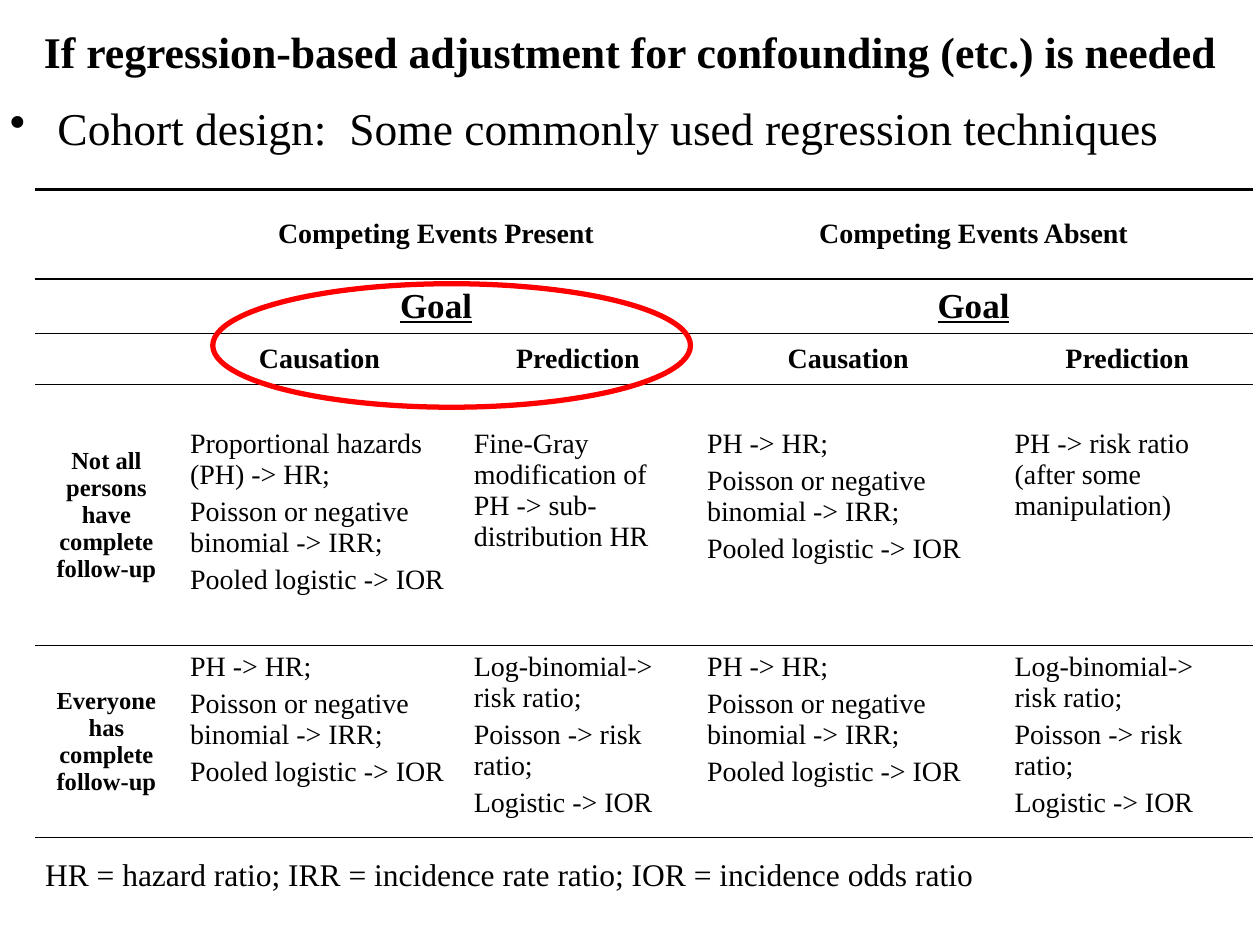
from lxml import etree
from pptx import Presentation
from pptx import util as u
from pptx.dml.color import RGBColor
from pptx.enum import shapes, text
from pptx.oxml import ns

FONT = "Times New Roman"
COLORS = {"ink": "000000", "highlight": "FF0000"}
PLAIN_TABLE_STYLE = "{2D5ABB26-0587-4C30-8999-92F81FD0307C}"
LEFT, CENTER = text.PP_ALIGN.LEFT, text.PP_ALIGN.CENTER

COLUMN_WIDTHS = [2.87, 5.72, 4.7, 6.2, 5.05]
ROW_HEIGHTS = [1.8, 0.97, 0.81, 5.26, 3.84]
TOP_MARGIN = 0.13
DEEP_MARGIN = 0.89
# Rules in points: (row, side) -> width
RULES = {(0, "T"): 2.25, (0, "B"): 1, (1, "T"): 1,
         (2, "B"): 1, (3, "T"): 1, (4, "B"): 1}

# Table wording
EVENTS = ["Competing Events Present", "Competing Events Absent"]
GOALS = ["Causation", "Prediction"]
RATE_MODELS = ["Poisson or negative binomial -> IRR;", "Pooled logistic -> IOR"]
HAZARD_MODELS = ["PH -> HR;"] + RATE_MODELS
RISK_MODELS = ["Log-binomial-> risk ratio;", "Poisson -> risk ratio;", "Logistic -> IOR"]
FOLLOW_UP = {
    "Not all persons have complete follow-up": [
        ["Proportional hazards (PH) -> HR;"] + RATE_MODELS,
        ["Fine-Gray modification of PH -> sub-distribution HR"],
        HAZARD_MODELS,
        ["PH -> risk ratio (after some manipulation)"],
    ],
    "Everyone has complete follow-up": [HAZARD_MODELS, RISK_MODELS] * 2,
}


def write(frame, lines, size, bold=False, underline=False, align=LEFT):
    """Fill a text frame with one paragraph per line."""
    frame.text = "\n".join(lines)
    for index, para in enumerate(frame.paragraphs):
        para.alignment = align
        para.space_before = u.Pt(size * 0.2 if index else 0)
        for span in para.runs:
            font = span.font
            font.name, font.size = FONT, u.Pt(size)
            font.bold, font.underline = bold, underline
            font.color.rgb = RGBColor.from_string(COLORS["ink"])


def add_text(page, place, line, size, **style):
    box = page.shapes.add_textbox(*map(u.Cm, place))
    box.text_frame.word_wrap = True
    write(box.text_frame, [line], size, **style)
    return box


def add_bullet(para, indent):
    props = para._p.get_or_add_pPr()
    props.set("marL", str(u.Cm(indent)))
    props.set("indent", str(-u.Cm(indent)))
    etree.SubElement(props, ns.qn("a:buChar"), char="•")


def add_rule(cell, side, width):
    props = cell._tc.get_or_add_tcPr()
    line = etree.SubElement(props, ns.qn("a:ln" + side), w=str(u.Pt(width)))
    fill = etree.SubElement(line, ns.qn("a:solidFill"))
    etree.SubElement(fill, ns.qn("a:srgbClr"), val=COLORS["ink"])


def write_heading(cell, line, size, underline=False):
    cell.vertical_anchor = text.MSO_ANCHOR.MIDDLE
    write(cell.text_frame, [line], size, bold=True, underline=underline, align=CENTER)


def add_table(page):
    frame = page.shapes.add_table(len(ROW_HEIGHTS), len(COLUMN_WIDTHS), u.Cm(0.71),
                                  u.Cm(3.82), u.Cm(sum(COLUMN_WIDTHS)),
                                  u.Cm(sum(ROW_HEIGHTS)))
    table = frame.table
    table.first_row = table.horz_banding = False
    table._tbl.tblPr.find(ns.qn("a:tableStyleId")).text = PLAIN_TABLE_STYLE
    for column, width in zip(table.columns, COLUMN_WIDTHS):
        column.width = u.Cm(width)
    for row, height in zip(table.rows, ROW_HEIGHTS):
        row.height = u.Cm(height)

    # Rules and clear fill
    for row_index, row in enumerate(table.rows):
        for cell in row.cells:
            for side in "TB":
                if (row_index, side) in RULES:
                    add_rule(cell, side, RULES[row_index, side])
            cell.fill.background()
            cell.margin_top = cell.margin_bottom = u.Cm(TOP_MARGIN)

    # Column headings, one pair of columns per kind of event
    for column, event in zip((1, 3), EVENTS):
        for row in (0, 1):
            table.cell(row, column).merge(table.cell(row, column + 1))
        write_heading(table.cell(0, column), event, 16)
        write_heading(table.cell(1, column), "Goal", 20, underline=True)
        for offset, goal in enumerate(GOALS):
            write_heading(table.cell(2, column + offset), goal, 16)

    # Techniques by follow-up
    for row, (heading, techniques) in enumerate(FOLLOW_UP.items(), start=3):
        write_heading(table.cell(row, 0), heading, 14)
        for column, lines in enumerate(techniques, start=1):
            cell = table.cell(row, column)
            cell.margin_top = u.Cm(DEEP_MARGIN if row == 3 else TOP_MARGIN)
            write(cell.text_frame, lines, 16)


def add_ring(page, place):
    ring = page.shapes.add_shape(shapes.MSO_SHAPE.OVAL, *map(u.Cm, place))
    ring.shadow.inherit = False
    ring.fill.background()
    ring.line.color.rgb = RGBColor.from_string(COLORS["highlight"])
    ring.line.width = u.Pt(3)


def main():
    deck = Presentation()
    deck.slide_width, deck.slide_height = u.Cm(25.4), u.Cm(19.05)
    page = deck.slides.add_slide(deck.slide_layouts[6])

    # Title
    title = add_text(page, (-1.8, 0.08, 29, 1.9),
                     "If regression-based adjustment for confounding (etc.) is needed",
                     25, bold=True, align=CENTER)
    title.text_frame.vertical_anchor = text.MSO_ANCHOR.MIDDLE

    add_table(page)

    # Lead-in and abbreviations
    lead = add_text(page, (-0.05, 1.9, 25.4, 1.55),
                    "Cohort design:  Some commonly used regression techniques", 26)
    add_bullet(lead.text_frame.paragraphs[0], 0.96)
    add_text(page, (0.66, 17.12, 25.4, 1.55),
             "HR = hazard ratio; IRR = incidence rate ratio; IOR = incidence odds ratio", 18)

    # Highlight around the first pair of goals
    add_ring(page, (4.29, 5.72, 9.63, 2.49))
    deck.save("out.pptx")


if __name__ == "__main__":
    main()
